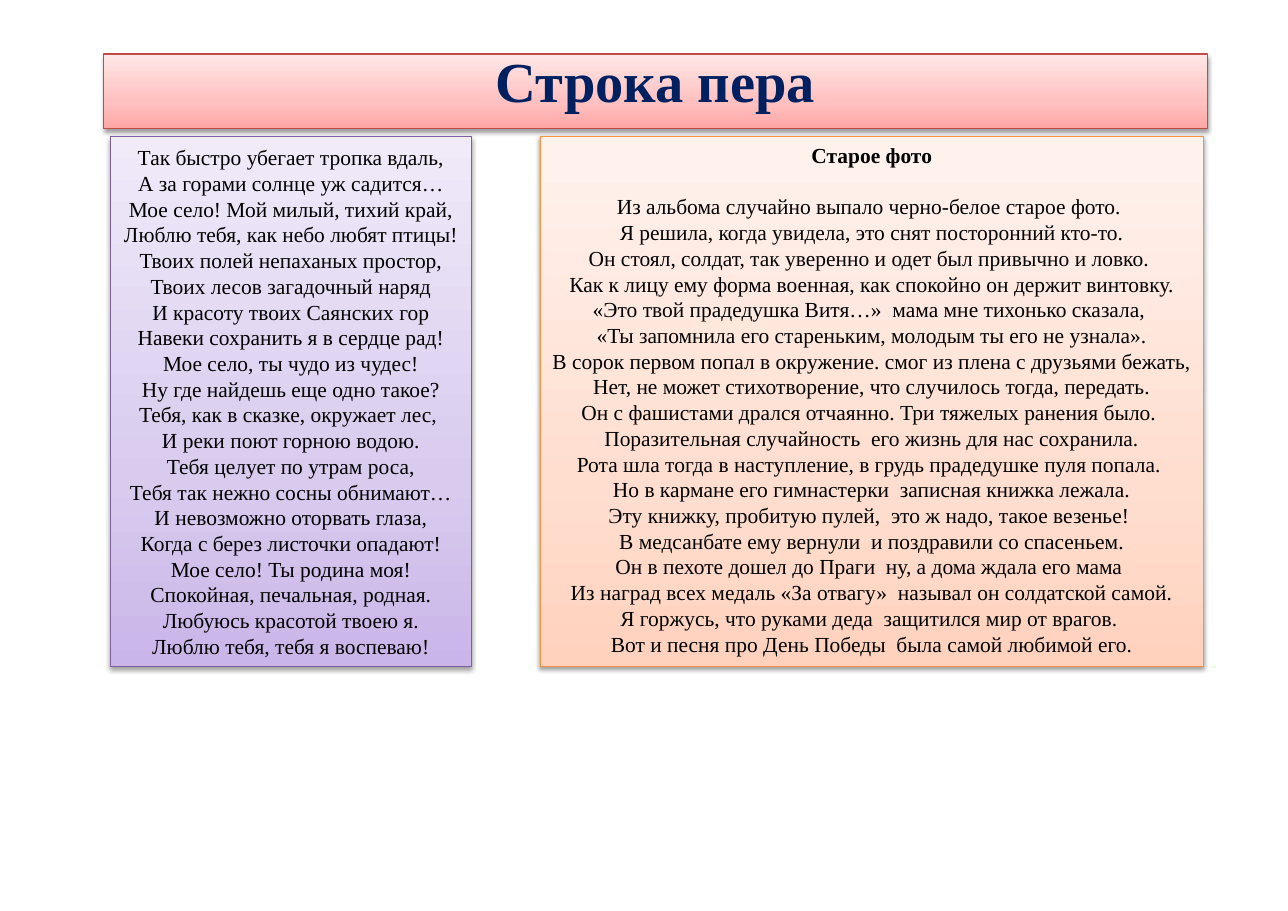
from copy import deepcopy

from lxml.etree import SubElement as Sub
from pptx import Presentation
from pptx.dml.color import RGBColor as RGB
from pptx.enum.shapes import MSO_SHAPE as Shape
from pptx.enum.text import MSO_ANCHOR as Anchor, PP_ALIGN as Align
from pptx.oxml.ns import qn
from pptx.util import Pt

FONT = "Times New Roman"
BLACK = RGB(0, 0, 0)
NAVY = RGB(0x00, 0x20, 0x60)

# Line colour, then gradient colours from bottom to top
RED = (RGB(0xBF, 0x4C, 0x48), RGB(0xFF, 0xA6, 0xA5),
       RGB(0xFF, 0xC0, 0xBF), RGB(0xFF, 0xE7, 0xE7))
PURPLE = (RGB(0x7D, 0x60, 0xA0), RGB(0xC9, 0xB5, 0xE8),
          RGB(0xD8, 0xCB, 0xEE), RGB(0xF0, 0xEA, 0xF9))
ORANGE = (RGB(0xF6, 0x92, 0x40), RGB(0xFF, 0xD2, 0xBD),
          RGB(0xFF, 0xDE, 0xD0), RGB(0xFF, 0xF2, 0xED))

VILLAGE = [
    "Так быстро убегает тропка вдаль,",
    "А за горами солнце уж садится…",
    "Мое село! Мой милый, тихий край,",
    "Люблю тебя, как небо любят птицы!",
    "Твоих полей непаханых простор,",
    "Твоих лесов загадочный наряд",
    "И красоту твоих Саянских гор",
    "Навеки сохранить я в сердце рад!",
    "Мое село, ты чудо из чудес!",
    "Ну где найдешь еще одно такое?",
    "Тебя, как в сказке, окружает лес, ",
    "И реки поют горною водою.",
    "Тебя целует по утрам роса,",
    "Тебя так нежно сосны обнимают…",
    "И невозможно оторвать глаза,",
    "Когда с берез листочки опадают!",
    "Мое село! Ты родина моя!",
    "Спокойная, печальная, родная.",
    "Любуюсь красотой твоею я.",
    "Люблю тебя, тебя я воспеваю!",
]

PHOTO = [
    "Старое фото",
    "Из альбома случайно выпало черно-белое старое фото. ",
    "Я решила, когда увидела, это снят посторонний кто-то.",
    "Он стоял, солдат, так уверенно и одет был привычно и ловко. ",
    "Как к лицу ему форма военная, как спокойно он держит винтовку.",
    "«Это твой прадедушка Витя…»  мама мне тихонько сказала, ",
    "«Ты запомнила его стареньким, молодым ты его не узнала».",
    "В сорок первом попал в окружение. смог из плена с друзьями бежать, ",
    "Нет, не может стихотворение, что случилось тогда, передать.",
    "Он с фашистами дрался отчаянно. Три тяжелых ранения было. ",
    "Поразительная случайность  его жизнь для нас сохранила.",
    "Рота шла тогда в наступление, в грудь прадедушке пуля попала. ",
    "Но в кармане его гимнастерки  записная книжка лежала.",
    "Эту книжку, пробитую пулей,  это ж надо, такое везенье! ",
    "В медсанбате ему вернули  и поздравили со спасеньем.",
    "Он в пехоте дошел до Праги  ну, а дома ждала его мама ",
    "Из наград всех медаль «За отвагу»  называл он солдатской самой.",
    "Я горжусь, что руками деда  защитился мир от врагов. ",
    "Вот и песня про День Победы  была самой любимой его.",
]


def shade(box, tones):
    """Fill with a three-stop gradient, pale at the top."""
    box.fill.gradient()
    box.fill.gradient_angle = 90
    last = box.fill.gradient_stops[1]._gs
    last.addprevious(deepcopy(last))
    for stop, tone, place in zip(box.fill.gradient_stops, tones, (0, 0.35, 1)):
        stop.color.rgb = tone
        stop.position = place


def drop(box):
    """Add a soft shadow below."""
    box.shadow.inherit = False
    effect = box._element.spPr.find(qn("a:effectLst"))
    cast = Sub(effect, qn("a:outerShdw"), blurRad=str(Pt(3.1)),
               dist=str(Pt(1.6)), dir="5400000", rotWithShape="0")
    tint = Sub(cast, qn("a:srgbClr"), val="000000")
    Sub(tint, qn("a:alpha"), val="38000")


def panel(slide, area, theme, anchor):
    box = slide.shapes.add_shape(Shape.RECTANGLE, *map(Pt, area))
    edge, *tones = theme
    shade(box, tones)
    box.line.color.rgb = edge
    box.line.width = Pt(0.75)
    drop(box)
    frame = box.text_frame
    frame.word_wrap = True
    frame.vertical_anchor = anchor
    return frame


def write(frame, lines, size, color, lead=None):
    """Put each line in its own centred paragraph."""
    frame.text = "\n".join(lines)
    for para in frame.paragraphs:
        para.alignment = Align.CENTER
        para.line_spacing = lead
        para.font.name = FONT
        para.font.size = Pt(size)
        para.font.color.rgb = color


def main():
    deck = Presentation()
    deck.slide_width, deck.slide_height = Pt(841.68), Pt(595.44)
    slide = deck.slides.add_slide(deck.slide_layouts[6])

    # Heading, set high in its band
    head = panel(slide, (67.7, 35.3, 721.4, 49), RED, Anchor.MIDDLE)
    head.margin_top, head.margin_bottom = 0, Pt(15)
    write(head, ["Строка пера"], 36.9, NAVY)
    head.paragraphs[0].font.bold = True

    # Poem about the village
    left = panel(slide, (72, 89.3, 236.2, 346.3), PURPLE, Anchor.MIDDLE)
    write(left, VILLAGE, 14, BLACK, Pt(16.8))

    # Poem about the photo, with one line of space under its title
    right = panel(slide, (353, 89.3, 433.4, 346.3), ORANGE, Anchor.TOP)
    write(right, PHOTO, 14, BLACK, Pt(16.8))
    title = right.paragraphs[0]
    title.font.bold = True
    title.space_after = Pt(16.8)

    deck.save("out.pptx")


if __name__ == "__main__":
    main()
